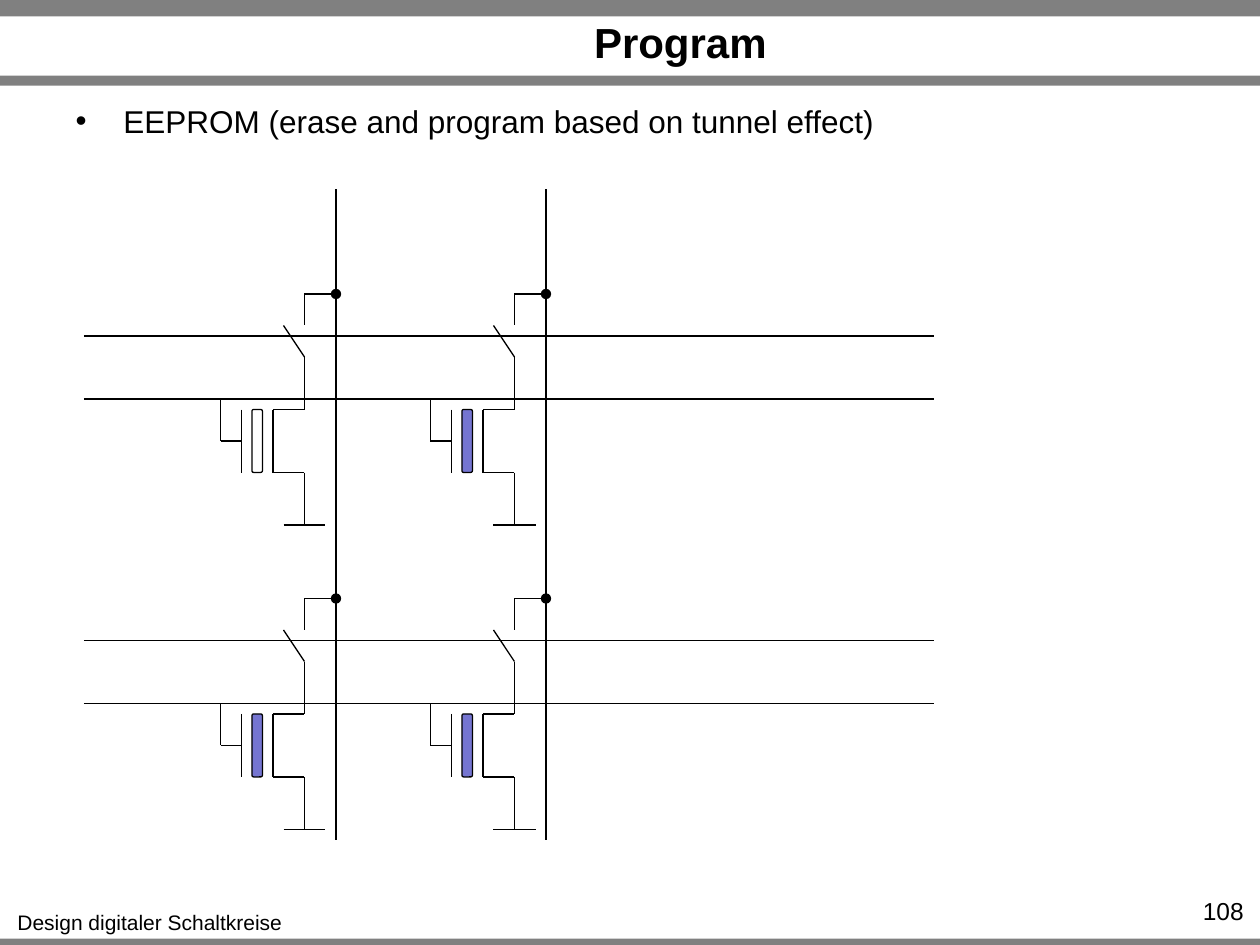
from typing import NamedTuple

from lxml import etree
from pptx import Presentation, util as u
from pptx.dml.color import RGBColor
from pptx.enum import shapes, text
from pptx.oxml.ns import qn

BLACK = RGBColor(0x00, 0x00, 0x00)
GRAY = RGBColor(0x80, 0x80, 0x80)
CHARGE = RGBColor(0x75, 0x75, 0xD1)
FONT = "Arial"
LINE_WIDTH = u.Pt(0.75)


class Wire(NamedTuple):
    """Ends of a line, in grid steps of 1/12 inch."""
    x1: int
    y1: int
    x2: int
    y2: int
    dot: bool = False


class Cell(NamedTuple):
    """A memory cell, placed at its node on the bit line."""
    bit_x: int
    node_y: int
    charged: bool


BIT_LINES = (32, 52)
NODE_ROWS = (28, 57)
ROW_LINE_OFFSETS = (4, 10)  # select line and word line below each node
CELLS = [
    Cell(x, y, charged=(x, y) != (BIT_LINES[0], NODE_ROWS[0]))
    for y in NODE_ROWS for x in BIT_LINES
]

# Relative to the node of the cell
CELL_WIRES = [
    Wire(-3, 0, 0, 0),             # node to switch
    Wire(0, 2, 0, 0, dot=True),
    Wire(-3, 0, -3, 3),
    Wire(-3, 6, -5, 3),            # open switch
    Wire(-3, 6, -3, 11),
    Wire(-6, 11, -3, 11),          # drain
    Wire(-6, 11, -6, 17),          # channel
    Wire(-6, 17, -3, 17),          # source
    Wire(-3, 17, -3, 22),
    Wire(-5, 22, -1, 22),          # ground
    Wire(-9, 11, -9, 17),          # control gate
    Wire(-9, 14, -11, 14),
    Wire(-11, 14, -11, 10),
]


def grid(steps: int) -> u.Length:
    return u.Inches(steps / 12)


def draw_wire(parent, wire: Wire, dx: int = 0, dy: int = 0) -> None:
    line = parent.add_connector(
        shapes.MSO_CONNECTOR.STRAIGHT,
        grid(wire.x1 + dx), grid(wire.y1 + dy),
        grid(wire.x2 + dx), grid(wire.y2 + dy),
    )
    line.line.color.rgb = BLACK
    line.line.width = LINE_WIDTH
    if wire.dot:
        etree.SubElement(line.line._get_or_add_ln(), qn("a:tailEnd"), type="oval")
    etree.SubElement(line._element.spPr, qn("a:effectLst"))


def draw_cell(parent, cell: Cell) -> None:
    group = parent.add_group_shape().shapes
    for wire in CELL_WIRES:
        draw_wire(group, wire, cell.bit_x, cell.node_y)
    gate = group.add_shape(
        shapes.MSO_SHAPE.ROUNDED_RECTANGLE,
        grid(cell.bit_x - 8), grid(cell.node_y + 11), grid(1), grid(6),
    )
    gate.shadow.inherit = False
    gate.line.color.rgb = BLACK
    gate.line.width = LINE_WIDTH
    if cell.charged:
        gate.fill.solid()
        gate.fill.fore_color.rgb = CHARGE
    else:
        gate.fill.background()


def draw_band(parent, top: float, height: float) -> None:
    band = parent.add_shape(
        shapes.MSO_SHAPE.RECTANGLE,
        0, u.Inches(top), u.Inches(10), u.Inches(height),
    )
    band.shadow.inherit = False
    band.fill.solid()
    band.fill.fore_color.rgb = GRAY
    band.line.fill.background()


def place(box, left: float, top: float, width: float, height: float) -> None:
    box.left, box.top = u.Inches(left), u.Inches(top)
    box.width, box.height = u.Inches(width), u.Inches(height)


def write(box, words: str, size: int, align: text.PP_ALIGN,
          bold: bool = False, wrap: bool = True):
    """Fill the box with one paragraph and return that paragraph."""
    box.text_frame.auto_size = text.MSO_AUTO_SIZE.NONE
    box.text_frame.word_wrap = wrap
    para = box.text_frame.paragraphs[0]
    para.alignment = align
    para.space_before = u.Pt(0)
    span = para.add_run()
    span.text = words
    span.font.name = FONT
    span.font.size = u.Pt(size)
    span.font.bold = bold
    span.font.color.rgb = BLACK
    return para


def add_label(parent, words: str, size: int, align: text.PP_ALIGN,
              area: tuple[float, float, float, float], wrap: bool = True) -> None:
    box = parent.add_textbox(*(u.Inches(length) for length in area))
    write(box, words, size, align, wrap=wrap)


def main() -> None:
    deck = Presentation()
    deck.slide_width, deck.slide_height = u.Inches(10), u.Inches(7.5)
    page = deck.slides.add_slide(deck.slide_layouts[1])
    parts = page.shapes

    for top, height in ((7.45, 0.08), (0, 0.13), (0.6, 0.08)):
        draw_band(parts, top, height)

    title, body = page.placeholders
    place(title, 1.3, 0.14, 8.2, 0.38)
    title.text_frame.vertical_anchor = text.MSO_ANCHOR.MIDDLE
    write(title, "Program", 24, text.PP_ALIGN.CENTER, bold=True)

    place(body, 0.5, 0.76, 9, 0.66)
    item = write(body, "EEPROM (erase and program based on tunnel effect)",
                 18, text.PP_ALIGN.LEFT)
    properties = item._p.get_or_add_pPr()
    properties.set("marL", str(u.Inches(0.38)))
    properties.set("indent", str(u.Inches(-0.38)))

    add_label(parts, "Design digitaler Schaltkreise", 12, text.PP_ALIGN.CENTER,
              (0.03, 7.17, 2.32, 0.3), wrap=False)
    add_label(parts, "108", 14, text.PP_ALIGN.RIGHT, (9.1, 7.06, 0.87, 0.24))

    for x in BIT_LINES:
        draw_wire(parts, Wire(x, 18, x, 80))
    for node_y in NODE_ROWS:
        for offset in ROW_LINE_OFFSETS:
            draw_wire(parts, Wire(8, node_y + offset, 89, node_y + offset))
    for cell in CELLS:
        draw_cell(parts, cell)

    deck.save("out.pptx")


if __name__ == "__main__":
    main()
